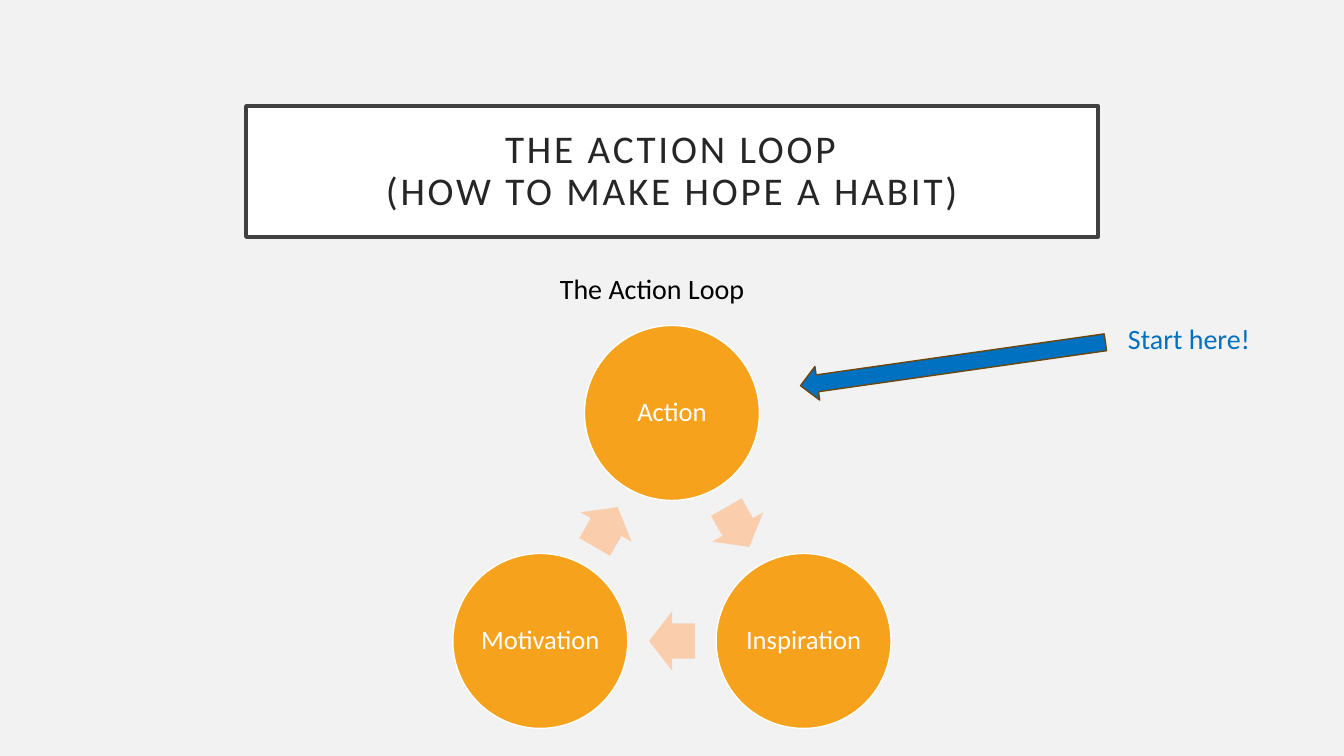
from copy import deepcopy
from math import cos, radians, sin

from pptx import Presentation
from pptx import util as u
from pptx.dml.color import RGBColor
from pptx.enum import shapes, text
from pptx.oxml.ns import qn

EMU_PER_PX = 914400 / 100.8
LOOP_X, LOOP_Y, LOOP_RADIUS = 672, 565, 152
CIRCLE = 175
ARROW_W, ARROW_H = 46, 59


def px(n):
    return u.Emu(round(n * EMU_PER_PX))


def color(value):
    return RGBColor.from_string(value)


def write(tf, words, size=20, ink="000000", align=None, anchor=None,
          inset=None, spacing=None, tracking=None, wrap=False):
    tf.word_wrap = wrap
    if anchor is not None:
        tf.vertical_anchor = anchor
    if inset is not None:
        tf.margin_left = tf.margin_right = px(inset)
        tf.margin_top = tf.margin_bottom = px(inset)
    p = tf.paragraphs[0]
    p.text = words
    p.alignment = align
    p.line_spacing = spacing
    for r in p.runs:
        r.font.name = "Calibri"
        r.font.size = u.Pt(size)
        r.font.color.rgb = color(ink)
        if tracking:
            r.font._element.set("spc", str(tracking * 100))
    # Line breaks take the format of the runs
    for br in p._p.findall(qn("a:br")):
        br.append(deepcopy(p.runs[0].font._element))


def paint(sp, fill, line=None, width=1):
    sp.fill.solid()
    sp.fill.fore_color.rgb = color(fill)
    if line:
        sp.line.color.rgb = color(line)
        sp.line.width = u.Pt(width)
    else:
        sp.line.fill.background()


def add_centered(s, kind, x, y, w, h, fill, line=None, rotation=0):
    sp = s.shapes.add_shape(kind, px(x - w / 2), px(y - h / 2), px(w), px(h))
    sp.shadow.inherit = False
    sp.rotation = rotation
    paint(sp, fill, line)
    return sp


def add_label(s, words, x, y, w, h, **fmt):
    box = s.shapes.add_textbox(px(x), px(y), px(w), px(h))
    write(box.text_frame, words, **fmt)


def add_title(s, words):
    sp = s.shapes.title
    sp.left, sp.top, sp.width, sp.height = px(246), px(106), px(852), px(131)
    paint(sp, "FFFFFF", "404040", 2.5)
    sp.text_frame.auto_size = text.MSO_AUTO_SIZE.NONE
    write(sp.text_frame, words, size=28, ink="262626", inset=20, spacing=0.9,
          tracking=2, wrap=True, align=text.PP_ALIGN.CENTER,
          anchor=text.MSO_ANCHOR.MIDDLE)


def loop_point(angle, radius):
    """Point around the loop's centre, clockwise from the top."""
    a = radians(angle)
    return LOOP_X + radius * sin(a), LOOP_Y - radius * cos(a)


def add_loop(s, steps):
    turn = 360 / len(steps)
    for i, step in enumerate(steps):
        x, y = loop_point(i * turn, LOOP_RADIUS)
        circle = add_centered(s, shapes.MSO_SHAPE.OVAL, x, y, CIRCLE, CIRCLE,
                              "F6A21D", "FFFFFF")
        write(circle.text_frame, step, size=19, ink="FFFFFF", inset=3,
              spacing=0.9, align=text.PP_ALIGN.CENTER,
              anchor=text.MSO_ANCHOR.MIDDLE)
        # Arrow halfway to the next circle
        angle = (i + 0.5) * turn
        x, y = loop_point(angle, LOOP_RADIUS * cos(radians(turn / 2)))
        arrow = add_centered(s, shapes.MSO_SHAPE.RIGHT_ARROW, x, y,
                             ARROW_W, ARROW_H, "FACEAC", rotation=angle)
        arrow.adjustments[0] = 0.6
        arrow.adjustments[1] = 0.5


def main():
    prs = Presentation()
    prs.slide_width, prs.slide_height = px(1344), px(756)
    s = prs.slides.add_slide(prs.slide_layouts[5])
    s.background.fill.solid()
    s.background.fill.fore_color.rgb = color("F2F2F2")

    add_title(s, "THE ACTION LOOP\v(HOW TO MAKE HOPE A HABIT)")
    add_loop(s, ["Action", "Inspiration", "Motivation"])

    # Caption and starting point
    add_label(s, "The Action Loop", 550, 267, 214, 44)
    add_label(s, "Start here!", 1118, 317, 143, 44, ink="0070C0")
    add_centered(s, shapes.MSO_SHAPE.LEFT_ARROW, 953, 364, 308, 34,
                 "0070C0", "6C470D", rotation=351.9)

    prs.save("out.pptx")


if __name__ == "__main__":
    main()
